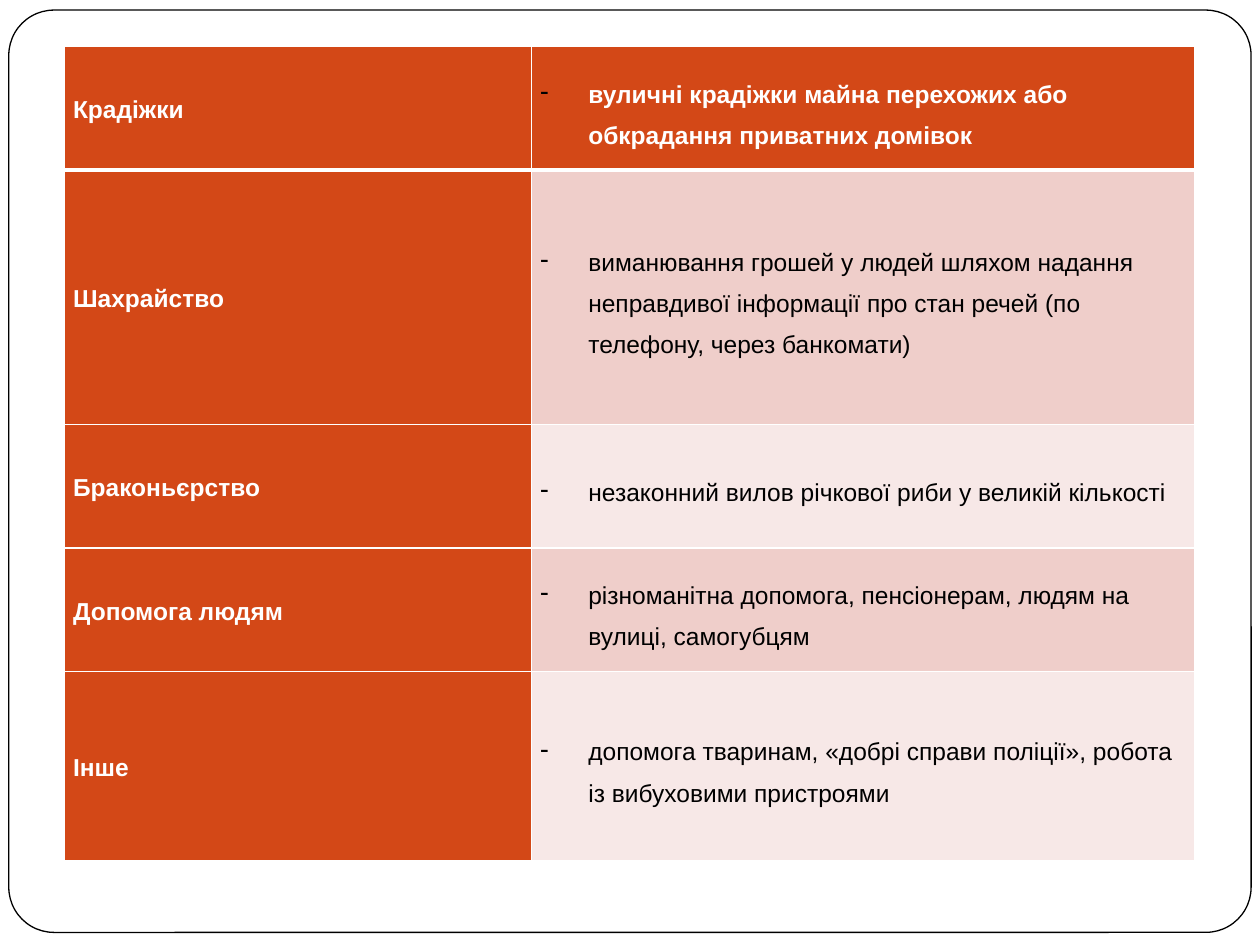
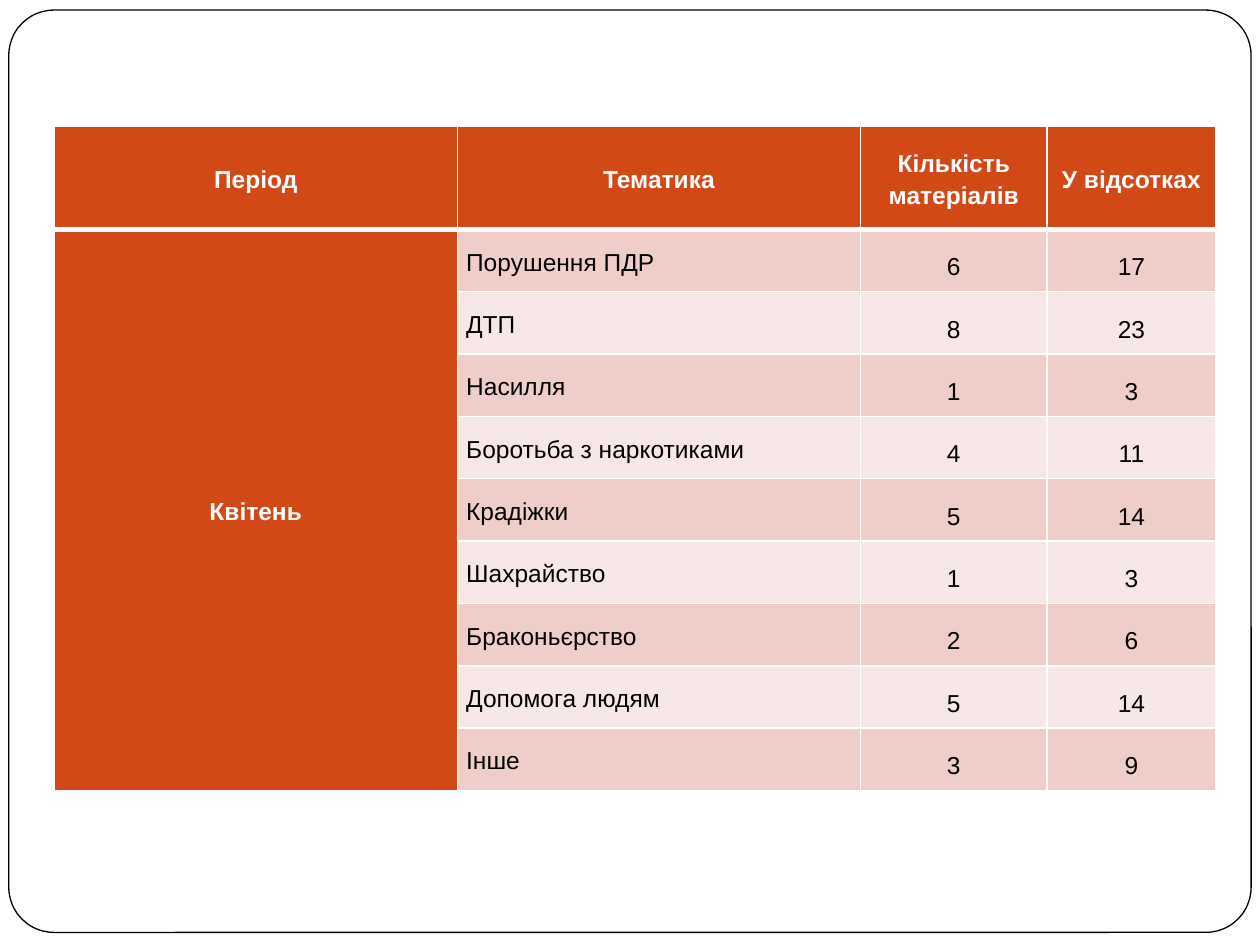
from lxml import etree
from pptx import Presentation
from pptx.dml.color import RGBColor
from pptx.enum.shapes import MSO_SHAPE
from pptx.enum.text import MSO_ANCHOR, PP_ALIGN
from pptx.oxml.ns import qn
from pptx.util import Inches, Pt

ROUNDED = MSO_SHAPE.ROUNDED_RECTANGLE
MIDDLE = MSO_ANCHOR.MIDDLE
LEFT, CENTER = PP_ALIGN.LEFT, PP_ALIGN.CENTER

WHITE, BLACK, ACCENT = "FFFFFF", "000000", "D34817"
BANDS = ["EFCECA", "F7E8E7"]
FONT, SIZE = "Arial", 14
LABEL_SPACING, WIDE_SPACING = 1.15, 1.5
INDENT = 0.38

TOPICS = [
    ("Крадіжки", "вуличні крадіжки майна перехожих або обкрадання приватних домівок"),
    ("Шахрайство", "виманювання грошей у людей шляхом надання неправдивої "
                   "інформації про стан речей (по телефону, через банкомати)"),
    ("Браконьєрство", "незаконний вилов річкової риби у великій кількості"),
    ("Допомога людям", "різноманітна допомога, пенсіонерам, людям на вулиці, самогубцям"),
    ("Інше", "допомога тваринам, «добрі справи поліції», робота із вибуховими пристроями"),
]
HEADERS = ("Період", "Тематика", "Кількість матеріалів", "У відсотках")
MONTH = "Квітень"
APRIL = [
    ("Порушення ПДР", 6, 17),
    ("ДТП", 8, 23),
    ("Насилля", 1, 3),
    ("Боротьба з наркотиками", 4, 11),
    ("Крадіжки", 5, 14),
    ("Шахрайство", 1, 3),
    ("Браконьєрство", 2, 6),
    ("Допомога людям", 5, 14),
    ("Інше", 3, 9),
]


def color(value):
    return RGBColor.from_string(value)


def add_solid(parent, value):
    fill = etree.SubElement(parent, qn("a:solidFill"))
    etree.SubElement(fill, qn("a:srgbClr"), val=value)


def add_framed_slide(prs):
    s = prs.slides.add_slide(prs.slide_layouts[6])
    frame = s.shapes.add_shape(ROUNDED, Inches(0.07), Inches(0.08), Inches(9.86), Inches(7.32))
    frame.adjustments[0] = 0.049
    frame.shadow.inherit = False
    frame.fill.solid()
    frame.fill.fore_color.rgb = color(WHITE)
    frame.line.color.rgb = color(BLACK)
    frame.line.width = Pt(0.75)
    return s


def set_borders(cell, row):
    widths = {"L": 1, "R": 1, "T": 3 if row == 1 else 1, "B": 3 if row == 0 else 1}
    tc_pr = cell._tc.get_or_add_tcPr()
    for side, width in widths.items():
        line = etree.SubElement(tc_pr, qn(f"a:ln{side}"), w=str(Pt(width)))
        add_solid(line, WHITE)


def set_dash(p):
    p_pr = p._p.get_or_add_pPr()
    p_pr.set("marL", str(Inches(INDENT)))
    p_pr.set("indent", str(-Inches(INDENT)))
    bullet_color = etree.SubElement(p_pr, qn("a:buClr"))
    etree.SubElement(bullet_color, qn("a:srgbClr"), val=BLACK)
    etree.SubElement(p_pr, qn("a:buChar"), char="-")


def style_cell(cell, row, col, align, spacing):
    strong = row == 0 or col == 0
    set_borders(cell, row)
    cell.fill.solid()
    cell.fill.fore_color.rgb = color(ACCENT if strong else BANDS[(row - 1) % 2])
    cell.vertical_anchor = MIDDLE
    cell.margin_left = cell.margin_right = Inches(0.07)
    cell.margin_top = cell.margin_bottom = 0
    p = cell.text_frame.paragraphs[0]
    p.alignment = align
    p.line_spacing = spacing
    for r in p.runs:
        r.font.name = FONT
        r.font.size = Pt(SIZE)
        r.font.bold = strong
        r.font.color.rgb = color(WHITE if strong else BLACK)


def add_grid(s, left, top, widths, heights, rows, layout):
    table = s.shapes.add_table(
        len(heights), len(widths), Inches(left), Inches(top),
        Inches(sum(widths)), Inches(sum(heights))).table
    for column, width in zip(table.columns, widths):
        column.width = Inches(width)
    for line, height in zip(table.rows, heights):
        line.height = Inches(height)
    for row, values in enumerate(rows):
        for col, value in enumerate(values):
            cell = table.cell(row, col)
            cell.text_frame.text = str(value)
            style_cell(cell, row, col, *layout(row, col))
    return table


def topic_layout(row, col):
    return LEFT, WIDE_SPACING if col else LABEL_SPACING


def april_layout(row, col):
    align = LEFT if row and col == 1 else CENTER
    return align, WIDE_SPACING if row and col > 1 else LABEL_SPACING


def add_topics(prs):
    s = add_framed_slide(prs)
    table = add_grid(s, 0.51, 0.37, [3.71, 5.26], [0.98, 2.02, 0.98, 0.98, 1.5],
                     TOPICS, topic_layout)
    for row in range(len(TOPICS)):
        set_dash(table.cell(row, 1).text_frame.paragraphs[0])


def add_april(prs):
    s = add_framed_slide(prs)
    rows = [HEADERS] + [("" if i else MONTH, *entry) for i, entry in enumerate(APRIL)]
    table = add_grid(s, 0.43, 1, [3.2, 3.2, 1.48, 1.34], [0.82] + [0.495] * len(APRIL),
                     rows, april_layout)
    table.cell(1, 0).merge(table.cell(len(APRIL), 0))


def main():
    prs = Presentation()
    prs.slide_width, prs.slide_height = Inches(10), Inches(7.5)
    add_topics(prs)
    add_april(prs)
    prs.save("out.pptx")


if __name__ == "__main__":
    main()
